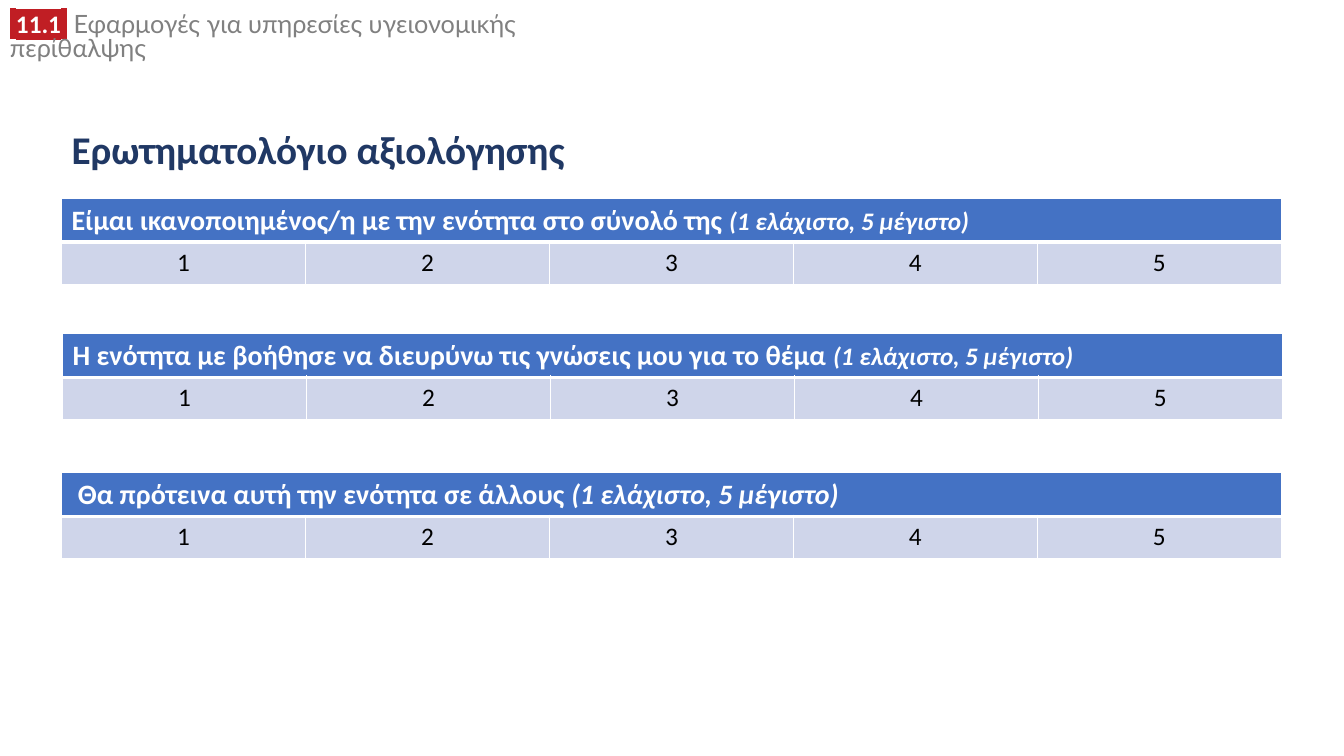
import pptx
import pptx.dml.color
import pptx.enum.text
import pptx.oxml
import pptx.oxml.ns
import pptx.util

Inches, Pt = pptx.util.Inches, pptx.util.Pt
RGBColor = pptx.dml.color.RGBColor
PP_ALIGN = pptx.enum.text.PP_ALIGN

WHITE = RGBColor(0xFF, 0xFF, 0xFF)
BLACK = RGBColor(0, 0, 0)
RED = RGBColor(0xC0, 0x1E, 0x24)
GREY = RGBColor(0x80, 0x80, 0x80)
NAVY = RGBColor(0x20, 0x38, 0x64)
BLUE = RGBColor(0x44, 0x72, 0xC4)
PALE = RGBColor(0xCF, 0xD5, 0xEA)

CHAPTER = [
    (" ", "Lato", True),
    ("11.1", "Calibri", True),
    (" ", "Lato", True),
    (" Εφαρμογές για υπηρεσίες υγειονομικής περίθαλψης", "Lato", False),
]
HEADING = "Ερωτηματολόγιο αξιολόγησης"
SCALE = "(1 ελάχιστο, 5 μέγιστο)"
RATINGS = ["1", "2", "3", "4", "5"]
QUESTIONS = [
    ("Είμαι ικανοποιημένος/η με την ενότητα στο σύνολό της ", 18, 0.61, 1.97),
    ("Η ενότητα με βοήθησε να διευρύνω τις γνώσεις μου για το θέμα ", 18, 0.62, 3.31),
    (" Θα πρότεινα αυτή την ενότητα σε άλλους ", 20, 0.61, 4.69),
]
LEFT, WIDTH, ROW_HEIGHT = 0.61, 12.1, 0.42


def add_run(paragraph, wording, size, color, bold=False, italic=False, font="Calibri"):
    run = paragraph.add_run()
    run.text = wording
    run.font.size = Pt(size)
    run.font.name = font
    run.font.bold = bold
    run.font.italic = italic
    run.font.color.rgb = color
    return run


def highlight(run, color):
    mark = pptx.oxml.parse_xml(
        f'<a:highlight {pptx.oxml.ns.nsdecls("a")}><a:srgbClr val="{color}"/></a:highlight>')
    run.font._element.find(pptx.oxml.ns.qn("a:solidFill")).addnext(mark)


def style_cell(cell, fill, top, bottom):
    properties = cell._tc.get_or_add_tcPr()
    for side, points in (("L", 1), ("R", 1), ("T", top), ("B", bottom)):
        properties.append(pptx.oxml.parse_xml(
            f'<a:ln{side} {pptx.oxml.ns.nsdecls("a")} w="{Pt(points)}">'
            f'<a:solidFill><a:srgbClr val="{WHITE}"/></a:solidFill></a:ln{side}>'))
    cell.fill.solid()
    cell.fill.fore_color.rgb = fill


def add_chapter(slide):
    frame = slide.shapes.add_textbox(0, Inches(0.09), Inches(6.4), Inches(0.35)).text_frame
    frame.word_wrap = True
    paragraph = frame.paragraphs[0]
    paragraph.line_spacing = 0.8
    for wording, font, marked in CHAPTER:
        run = add_run(paragraph, wording, 18, WHITE if marked else GREY, marked, font=font)
        if marked:
            highlight(run, RED)


def add_heading(slide):
    title = slide.shapes.title
    title.left, title.top = Inches(LEFT), Inches(1.18)
    title.width, title.height = Inches(WIDTH), Inches(0.66)
    title.text_frame.auto_size = pptx.enum.text.MSO_AUTO_SIZE.NONE
    title.text_frame.vertical_anchor = pptx.enum.text.MSO_ANCHOR.MIDDLE
    paragraph = title.text_frame.paragraphs[0]
    paragraph.alignment = PP_ALIGN.LEFT
    paragraph.line_spacing = 0.9
    add_run(paragraph, HEADING, 28, NAVY, True)


def add_question(slide, question, scale_size, left, top):
    table = slide.shapes.add_table(
        2, len(RATINGS), Inches(left), Inches(top), Inches(WIDTH), Inches(2 * ROW_HEIGHT)).table
    for column, rating in enumerate(RATINGS):
        style_cell(table.cell(0, column), BLUE, 1, 3)
        answer = table.cell(1, column)
        style_cell(answer, PALE, 3, 1)
        paragraph = answer.text_frame.paragraphs[0]
        paragraph.alignment = PP_ALIGN.CENTER
        add_run(paragraph, rating, 18, BLACK)
    header = table.cell(0, 0)
    header.merge(table.cell(0, len(RATINGS) - 1))
    paragraph = header.text_frame.paragraphs[0]
    add_run(paragraph, question, 20, WHITE, True)
    add_run(paragraph, SCALE, scale_size, WHITE, True, True)


def main():
    deck = pptx.Presentation()
    deck.slide_width, deck.slide_height = Inches(13.33), Inches(7.5)
    slide = deck.slides.add_slide(deck.slide_layouts[5])
    add_chapter(slide)
    add_heading(slide)
    for question in QUESTIONS:
        add_question(slide, *question)
    deck.save("out.pptx")


if __name__ == "__main__":
    main()
